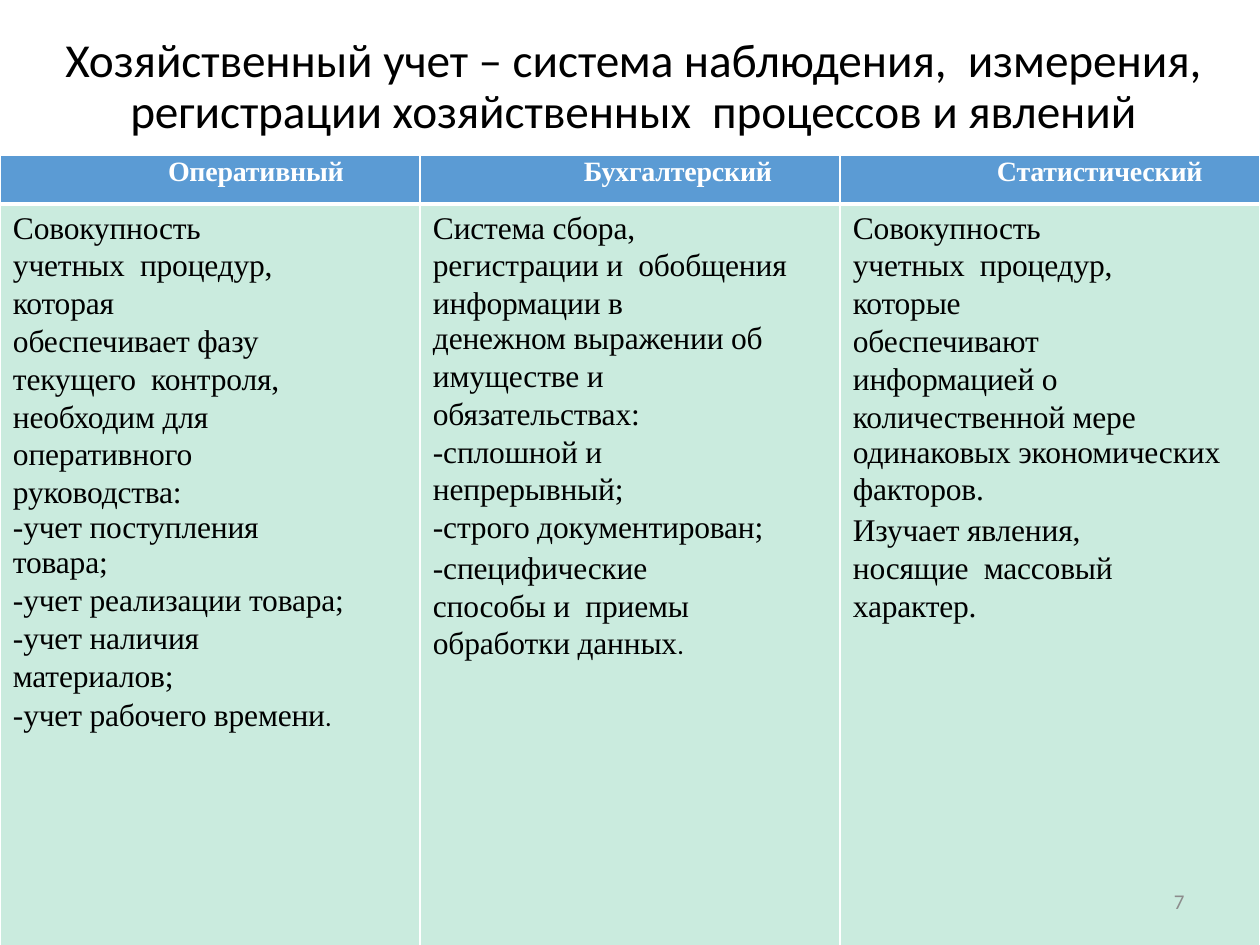
import pptx
import pptx.dml.color
import pptx.enum.text
import pptx.oxml
import pptx.oxml.ns
import pptx.util

EMU_PER_PX = 914400 / 126
ALIGN = pptx.enum.text.PP_ALIGN
MIDDLE = pptx.enum.text.MSO_ANCHOR.MIDDLE
SERIF = "Times New Roman"
WHITE, BLACK = "FFFFFF", "000000"
NARROW = 110  # right indent of the paragraphs that wrap early

TITLE = ("Хозяйственный учет – система наблюдения,  измерения, "
         "регистрации хозяйственных  процессов и явлений")

# heading, its left indent
HEADINGS = [("Оперативный", 168), ("Бухгалтерский", 164), ("Статистический", 157)]

# text, right indent, line spacing, space before
DESCRIPTIONS = [
    [("Совокупность учетных  процедур, которая", NARROW, 21.6, 2.7),
     ("обеспечивает фазу текущего  контроля, необходим для  оперативного руководства:",
      NARROW, 21.6, 0),
     ("-учет поступления товара;", NARROW, 20.1, 0),
     ("-учет реализации товара;", 0, 21.6, 0),
     ("-учет наличия материалов;", NARROW, 21.6, 0),
     ("-учет рабочего времени", 0, 22.8, 0)],
    [("Система сбора, регистрации и  обобщения информации в", 42, 21.6, 2.7),
     ("денежном выражении об", 0, 20.1, 0),
     ("имуществе и обязательствах:", NARROW, 21.6, 0),
     ("-сплошной и непрерывный;", NARROW, 21.6, 0),
     ("-строго документирован;", 0, 21.6, 0),
     ("-специфические способы и  приемы обработки данных", NARROW, 21.6, 1.5)],
    [("Совокупность учетных  процедур, которые", NARROW, 21.6, 2.7),
     ("обеспечивают информацией о  количественной мере", NARROW, 21.6, 0),
     ("одинаковых экономических", 0, 20.1, 0),
     ("факторов.", 0, 21.6, 0),
     ("Изучает явления, носящие  массовый характер.", NARROW, 21.6, 1.5)],
]


def px(length):
    return pptx.util.Emu(round(length * EMU_PER_PX))


def rgb(colour):
    return pptx.dml.color.RGBColor.from_string(colour)


def add_run(paragraph, text, size=18, font=SERIF, colour=BLACK, bold=False, tracking=-0.1):
    run = paragraph.add_run()
    run.text = text
    run.font.size = pptx.util.Pt(size)
    run.font.name = font
    run.font.bold = bold
    run.font.color.rgb = rgb(colour)
    run.font._element.set("spc", str(round(tracking * 100)))


def format_paragraph(paragraph, align=ALIGN.LEFT, left=0, right=0, spacing=None, before=0):
    paragraph.alignment = align
    paragraph.space_before = pptx.util.Pt(before)
    if spacing:
        paragraph.line_spacing = pptx.util.Pt(spacing)
    properties = paragraph._p.get_or_add_pPr()
    properties.set("marL", str(px(left)))
    properties.set("marR", str(px(right)))
    properties.set("indent", "0")


def set_margins(frame, top):
    frame.margin_left = frame.margin_right = frame.margin_bottom = 0
    frame.margin_top = px(top)


def style_cell(cell, fill, top_margin, top_line, bottom_line):
    set_margins(cell, top_margin)
    properties = cell._tc.get_or_add_tcPr()
    for side, width in (("L", 1), ("R", 1), ("T", top_line), ("B", bottom_line)):
        properties.append(pptx.oxml.parse_xml(
            f'<a:ln{side} {pptx.oxml.ns.nsdecls("a")} w="{pptx.util.Pt(width)}">'
            f'<a:solidFill><a:srgbClr val="{WHITE}"/></a:solidFill></a:ln{side}>'))
    cell.fill.solid()
    cell.fill.fore_color.rgb = rgb(fill)


def fill_title(title):
    title.left, title.top, title.width, title.height = map(px, (15, 28, 1230, 110))
    frame = title.text_frame
    frame.word_wrap = True
    frame.vertical_anchor = MIDDLE
    set_margins(frame, 8)
    paragraph = frame.paragraphs[0]
    format_paragraph(paragraph, align=ALIGN.CENTER, left=6, spacing=29.2, before=4.4)
    add_run(paragraph, TITLE, size=27, font="Calibri", tracking=-0.05)


def add_accounting_table(slide):
    table = slide.shapes.add_table(2, 3, 0, px(155), px(1260), px(808)).table
    for row, height in zip(table.rows, (49, 759)):
        row.height = px(height)
    for column, (heading, indent) in enumerate(HEADINGS):
        table.columns[column].width = px(420)
        header, body = table.cell(0, column), table.cell(1, column)

        style_cell(header, "5B9BD4", 1, top_line=1, bottom_line=3)
        paragraph = header.text_frame.paragraphs[0]
        format_paragraph(paragraph, left=indent, before=0.7)
        add_run(paragraph, heading, size=16, colour=WHITE, bold=True)

        style_cell(body, "CAEBDE", 4, top_line=3, bottom_line=1)
        frame = body.text_frame
        for index, (text, right, spacing, before) in enumerate(DESCRIPTIONS[column]):
            paragraph = frame.add_paragraph() if index else frame.paragraphs[0]
            format_paragraph(paragraph, left=13, right=right, spacing=spacing, before=before)
            add_run(paragraph, text)
        if not text.endswith("."):
            add_run(paragraph, ".", size=15, font="Calibri")


def add_page_number(slide):
    frame = slide.shapes.add_textbox(px(903), px(876), px(294), px(50)).text_frame
    frame.word_wrap = True
    frame.vertical_anchor = MIDDLE
    format_paragraph(frame.paragraphs[0], align=ALIGN.RIGHT)
    add_run(frame.paragraphs[0], "7", size=12, font="Calibri", colour="8C8C8C", tracking=0)


def main():
    presentation = pptx.Presentation()
    presentation.slide_width, presentation.slide_height = px(1260), px(945)
    slide = presentation.slides.add_slide(presentation.slide_layouts[5])
    fill_title(slide.shapes.title)
    add_accounting_table(slide)
    add_page_number(slide)
    presentation.save("out.pptx")


if __name__ == "__main__":
    main()
